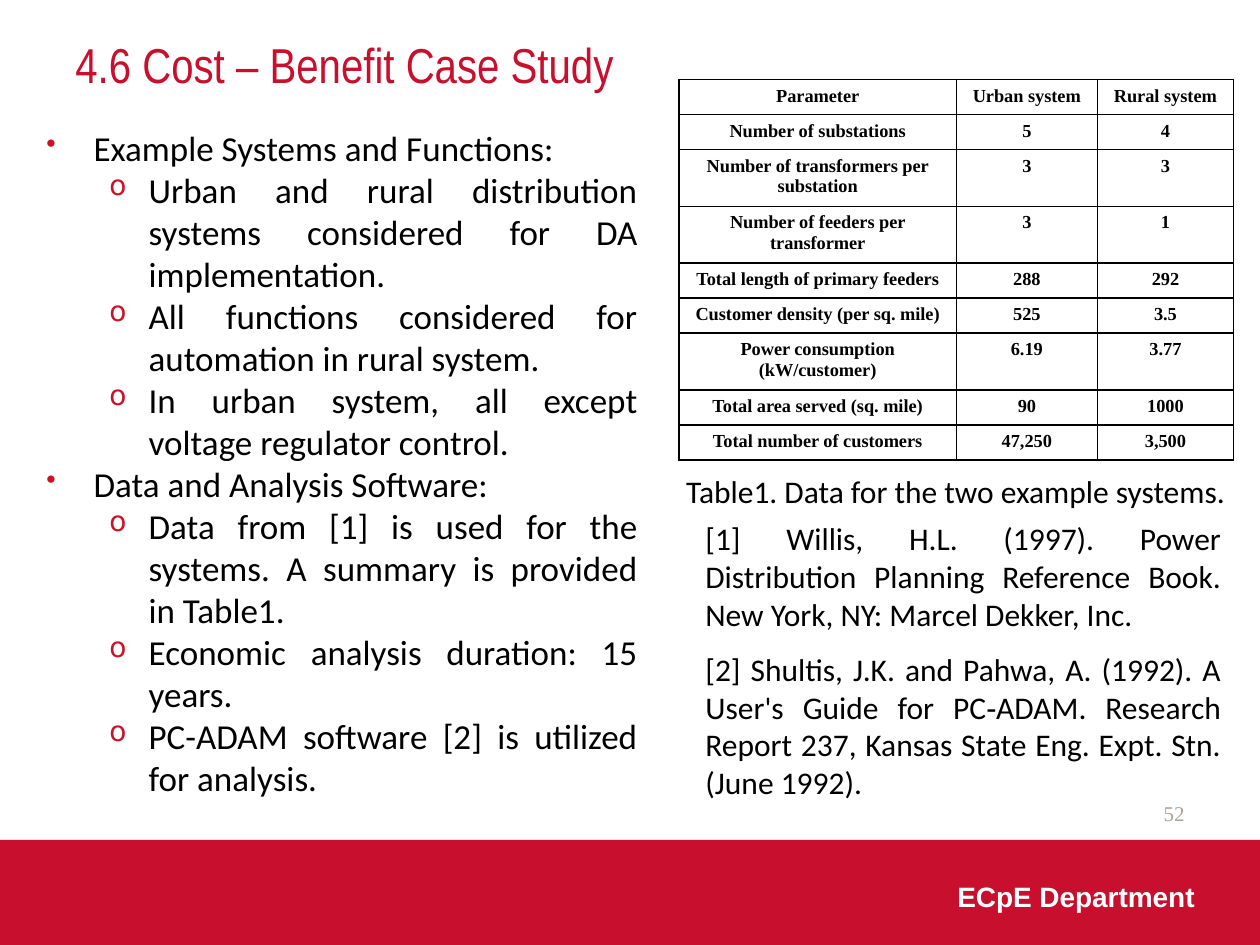
from lxml import etree
from pptx import Presentation
from pptx.dml.color import RGBColor
from pptx.enum import shapes, text
from pptx.oxml.ns import qn
from pptx.util import Pt

RED = RGBColor(0xC8, 0x10, 0x2E)
BULLET_RED = RGBColor(0xCE, 0x11, 0x26)
GREY = RGBColor(0xAC, 0xA3, 0x9A)
BLACK = RGBColor(0, 0, 0)
WHITE = RGBColor(0xFF, 0xFF, 0xFF)

ALIGN = text.PP_ALIGN
MIDDLE = text.MSO_ANCHOR.MIDDLE

OUTLINE = [
    ("Example Systems and Functions:", [
        "Urban and rural distribution systems considered for DA implementation.",
        "All functions considered for automation in rural system.",
        "In urban system, all except voltage regulator control.",
    ]),
    ("Data and Analysis Software:", [
        "Data from [1] is used for the systems. A summary is provided in Table1.",
        "Economic analysis duration: 15 years.",
        "PC-ADAM software [2] is utilized for analysis.",
    ]),
]
REFERENCES = [
    "[1] Willis, H.L. (1997). Power Distribution Planning Reference Book. "
    "New York, NY: Marcel Dekker, Inc.",
    "[2] Shultis, J.K. and Pahwa, A. (1992). A User's Guide for PC‐ADAM. "
    "Research Report 237, Kansas State Eng. Expt. Stn. (June 1992).",
]
SYSTEMS = [
    ("Parameter", "Urban system", "Rural system"),
    ("Number of substations", "5", "4"),
    ("Number of transformers per substation", "3", "3"),
    ("Number of feeders per transformer", "3", "1"),
    ("Total length of primary feeders", "288", "292"),
    ("Customer density (per sq. mile)", "525", "3.5"),
    ("Power consumption (kW/customer)", "6.19", "3.77"),
    ("Total area served (sq. mile)", "90", "1000"),
    ("Total number of customers", "47,250", "3,500"),
]
COLUMN_WIDTHS = (158.4, 80.6, 77.8)
ROW_HEIGHT, TALL_ROW_HEIGHT = 20, 32.5
TALL_ROWS = (2, 3, 6)


def format_paragraph(para, font, **layout):
    """Apply paragraph attributes, then font attributes and colour."""
    for name, value in layout.items():
        setattr(para, name, value)
    for name, value in font.items():
        if name == "color":
            para.font.color.rgb = value
        else:
            setattr(para.font, name, value)


def set_indent(para, left, hanging=0):
    properties = para._p.get_or_add_pPr()
    properties.set("marL", str(Pt(left)))
    properties.set("indent", str(-Pt(hanging)))


def add_bullet(para, symbol):
    properties = para._p.get_or_add_pPr()
    color = etree.SubElement(properties, qn("a:buClr"))
    etree.SubElement(color, qn("a:srgbClr"), val=str(BULLET_RED))
    etree.SubElement(properties, qn("a:buSzPct"), val="80000")
    etree.SubElement(properties, qn("a:buChar"), char=symbol)


def add_box(page, left, top, width, height, anchor=text.MSO_ANCHOR.TOP):
    box = page.shapes.add_textbox(Pt(left), Pt(top), Pt(width), Pt(height))
    box.text_frame.word_wrap = True
    box.text_frame.vertical_anchor = anchor
    return box.text_frame


def add_label(page, words, place, font, align=ALIGN.LEFT, **options):
    para = add_box(page, *place, **options).paragraphs[0]
    para.text = words
    format_paragraph(para, font, alignment=align)


def next_paragraph(frame):
    """Use the empty first paragraph before adding others."""
    first = frame.paragraphs[0]
    return frame.add_paragraph() if first.runs else first


def add_outline(page):
    frame = add_box(page, 19.4, 68.5, 352, 404)
    font = {"name": "Calibri", "size": Pt(20), "color": BLACK}

    def add_item(words, level, symbol, left, hanging):
        para = next_paragraph(frame)
        para.text = words
        set_indent(para, left, hanging)
        format_paragraph(para, {}, level=level, alignment=ALIGN.JUSTIFY,
                         line_spacing=Pt(24))
        add_bullet(para, symbol)
        format_paragraph(para, font)

    for heading, points in OUTLINE:
        add_item(heading, 0, "•", 27, 27)
        for point in points:
            add_item(point, 1, "o", 58.5, 22.5)


def add_references(page):
    frame = add_box(page, 360, 293, 345, 182)
    font = {"name": "Calibri", "size": Pt(18), "color": BLACK}
    for number, reference in enumerate(REFERENCES):
        para = next_paragraph(frame)
        para.text = reference
        set_indent(para, 36)
        format_paragraph(para, font, level=1, alignment=ALIGN.JUSTIFY,
                         space_before=Pt(4 if number else 0), space_after=Pt(6))


def add_borders(cell):
    properties = cell._tc.get_or_add_tcPr()
    for index, side in enumerate(("lnL", "lnR", "lnT", "lnB")):
        line = etree.Element(qn("a:" + side), w=str(Pt(1)))
        fill = etree.SubElement(line, qn("a:solidFill"))
        etree.SubElement(fill, qn("a:srgbClr"), val=str(BLACK))
        properties.insert(index, line)


def add_systems_table(page):
    heights = [TALL_ROW_HEIGHT if row in TALL_ROWS else ROW_HEIGHT
               for row in range(len(SYSTEMS))]
    table = page.shapes.add_table(
        len(SYSTEMS), len(COLUMN_WIDTHS), Pt(388.1), Pt(45.4),
        Pt(sum(COLUMN_WIDTHS)), Pt(sum(heights))).table
    for column, width in zip(table.columns, COLUMN_WIDTHS):
        column.width = Pt(width)
    font = {"name": "Times New Roman", "size": Pt(10.5), "bold": True, "color": BLACK}
    for row, height, values in zip(table.rows, heights, SYSTEMS):
        row.height = Pt(height)
        for cell, value in zip(row.cells, values):
            cell.text = value
            cell.fill.background()
            format_paragraph(cell.text_frame.paragraphs[0], font,
                             alignment=ALIGN.CENTER)
            add_borders(cell)


def add_footer_band(page):
    band = page.shapes.add_shape(shapes.MSO_SHAPE.RECTANGLE,
                                 Pt(0), Pt(480), Pt(720), Pt(60))
    band.shadow.inherit = False
    band.fill.solid()
    band.fill.fore_color.rgb = RED
    band.line.fill.background()


def main():
    deck = Presentation()
    deck.slide_width, deck.slide_height = Pt(720), Pt(540)
    page = deck.slides.add_slide(deck.slide_layouts[6])

    add_footer_band(page)
    add_label(page, "4.6 Cost – Benefit Case Study", (36, 12.2, 648, 49),
              {"name": "Arial Narrow", "size": Pt(28), "color": RED}, anchor=MIDDLE)
    add_label(page, "52", (516, 450, 168, 29),
              {"name": "Times New Roman", "size": Pt(12), "color": GREY},
              align=ALIGN.RIGHT, anchor=MIDDLE)
    add_outline(page)
    add_label(page, "Table1. Data for the two example systems.", (385, 266.4, 345, 29),
              {"name": "Calibri", "size": Pt(18), "color": BLACK})
    add_references(page)
    add_label(page, "ECpE Department", (540, 499, 174, 30),
              {"name": "Arial", "size": Pt(16), "bold": True, "color": WHITE})
    add_systems_table(page)
    deck.save("out.pptx")


if __name__ == "__main__":
    main()
